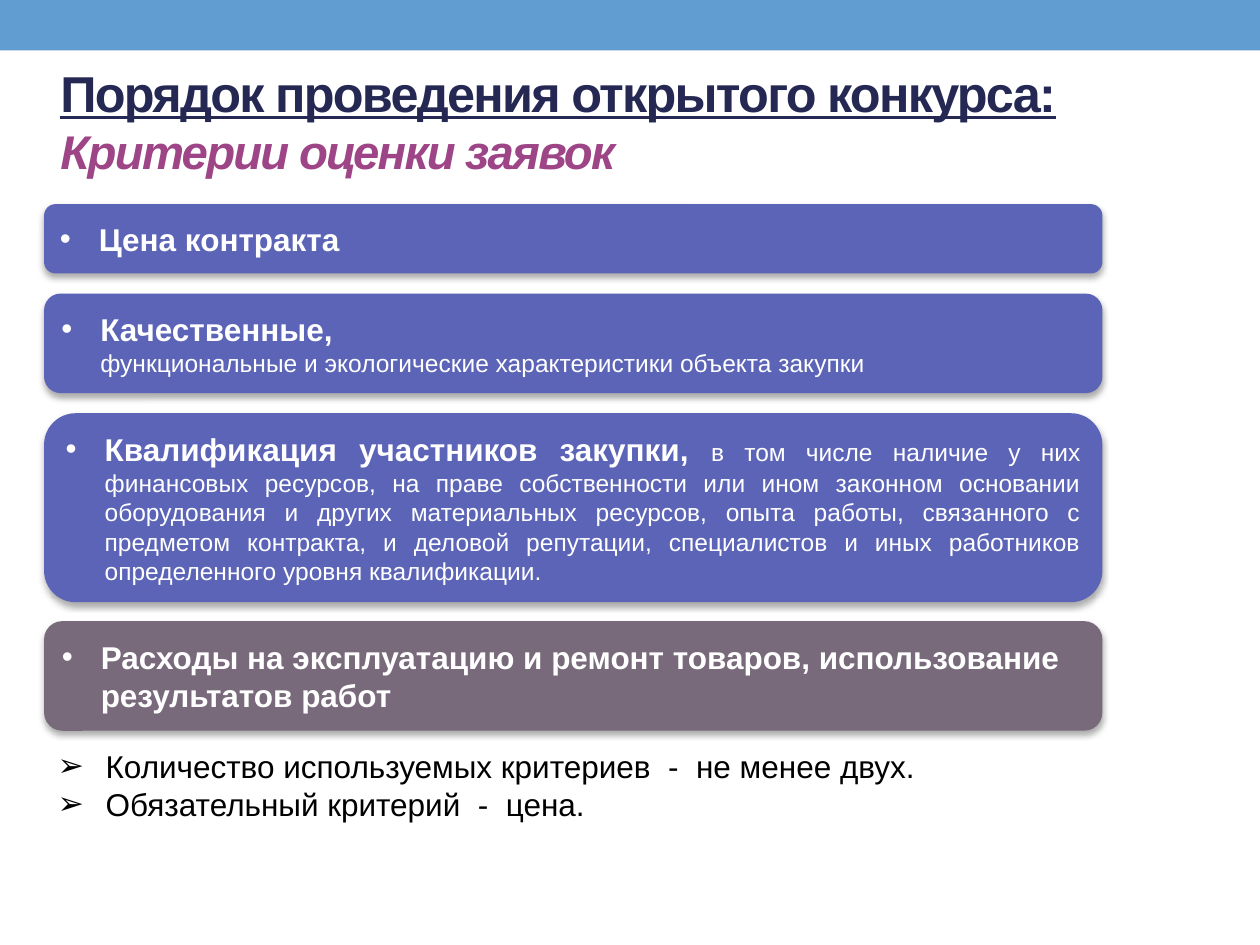
from lxml.etree import SubElement
from pptx import Presentation
from pptx.dml.color import RGBColor
from pptx.enum.shapes import MSO_SHAPE
from pptx.enum.text import MSO_ANCHOR, MSO_AUTO_SIZE, PP_ALIGN
from pptx.oxml.ns import qn
from pptx.util import Inches, Pt

SKY = RGBColor(0x62, 0x9D, 0xD1)
NAVY = RGBColor(0x24, 0x28, 0x52)
PLUM = RGBColor(0x9D, 0x45, 0x86)
INDIGO = RGBColor(0x5C, 0x64, 0xB7)
MAUVE = RGBColor(0x78, 0x69, 0x7B)
WHITE = RGBColor(0xFF, 0xFF, 0xFF)
BLACK = RGBColor(0x00, 0x00, 0x00)


def format_bullet(paragraph, symbol, indent, color, align):
    properties = paragraph._p.get_or_add_pPr()
    properties.set("marL", str(Inches(indent)))
    properties.set("indent", str(-Inches(indent)))
    SubElement(properties, qn("a:buFont"), typeface="Arial")
    SubElement(properties, qn("a:buChar"), char=symbol)
    paragraph.alignment = align
    paragraph.font.name = "Arial"
    paragraph.font.color.rgb = color


def add_soft_shadow(shape):
    effects = SubElement(shape._element.spPr, qn("a:effectLst"))
    shadow = SubElement(effects, qn("a:outerShdw"), blurRad=str(Pt(3.5)),
                        dist=str(Pt(2.2)), dir="5400000", rotWithShape="0")
    tint = SubElement(shadow, qn("a:srgbClr"), val="000000")
    SubElement(tint, qn("a:alpha"), val="32000")


prs = Presentation()
prs.slide_width, prs.slide_height = Inches(10), Inches(7.5)
slide = prs.slides.add_slide(prs.slide_layouts[5])

band = slide.shapes.add_shape(MSO_SHAPE.RECTANGLE, 0, 0, prs.slide_width, Inches(0.4))
band.shadow.inherit = False
band.fill.solid()
band.fill.fore_color.rgb = SKY
band.line.fill.background()

title = slide.shapes.title
title.left, title.top = Inches(0.38), Inches(0.6)
title.width, title.height = Inches(9.25), Inches(0.87)
title.text_frame.vertical_anchor = MSO_ANCHOR.BOTTOM
title.text_frame.auto_size = MSO_AUTO_SIZE.NONE
title.text_frame.word_wrap = True
heading = title.text_frame.paragraphs[0]
heading.alignment = PP_ALIGN.LEFT
heading.font.name = "Arial"
heading.font.bold = True
procedure = heading.add_run()
procedure.text = "Порядок проведения открытого конкурса:"
procedure.font.size = Pt(28.8)
procedure.font.color.rgb = NAVY
procedure.font.underline = True
heading.add_line_break()
subject = heading.add_run()
subject.text = "Критерии оценки заявок"
subject.font.size = Pt(27)
subject.font.color.rgb = PLUM
subject.font.italic = True
for run in heading.runs:
    run._r.get_or_add_rPr().set("spc", "-100")

criteria = [
    (1.62, 0.55, INDIGO, PP_ALIGN.LEFT, "Цена контракта", "", False),
    (2.33, 0.79, INDIGO, PP_ALIGN.LEFT, "Качественные,",
     "функциональные и экологические характеристики объекта закупки", True),
    (3.28, 1.5, INDIGO, PP_ALIGN.JUSTIFY, "Квалификация участников закупки, ",
     "в том числе наличие у них финансовых ресурсов, на праве собственности "
     "или ином законном основании оборудования и других материальных ресурсов, "
     "опыта работы, связанного с предметом контракта, и деловой репутации, "
     "специалистов и иных работников определенного уровня квалификации.", False),
    (4.93, 0.87, MAUVE, PP_ALIGN.LEFT,
     "Расходы на эксплуатацию и ремонт товаров, использование результатов работ",
     "", False),
]
for top, height, color, align, name, detail, on_new_line in criteria:
    card = slide.shapes.add_shape(MSO_SHAPE.ROUNDED_RECTANGLE, Inches(0.35),
                                  Inches(top), Inches(8.4), Inches(height))
    card.fill.solid()
    card.fill.fore_color.rgb = color
    card.line.fill.background()
    add_soft_shadow(card)
    card.text_frame.word_wrap = True
    card.text_frame.vertical_anchor = MSO_ANCHOR.MIDDLE
    criterion = card.text_frame.paragraphs[0]
    format_bullet(criterion, "•", 0.31, WHITE, align)
    for text, size, bold in ((name, 18, True), (detail, 14, False)):
        if not text:
            continue
        if on_new_line and text == detail:
            criterion.add_line_break()
        run = criterion.add_run()
        run.text = text
        run.font.size = Pt(size)
        run.font.bold = bold

rules = slide.shapes.add_textbox(Inches(0.36), Inches(5.88), Inches(9.29), Inches(0.71))
rules.text_frame.word_wrap = True
rules.text_frame.text = ("Количество используемых критериев  -  не менее двух.\n"
                         "Обязательный критерий  -  цена.")
for rule in rules.text_frame.paragraphs:
    format_bullet(rule, "➢", 0.38, BLACK, PP_ALIGN.JUSTIFY)
    rule.font.size = Pt(18)

prs.save("out.pptx")
